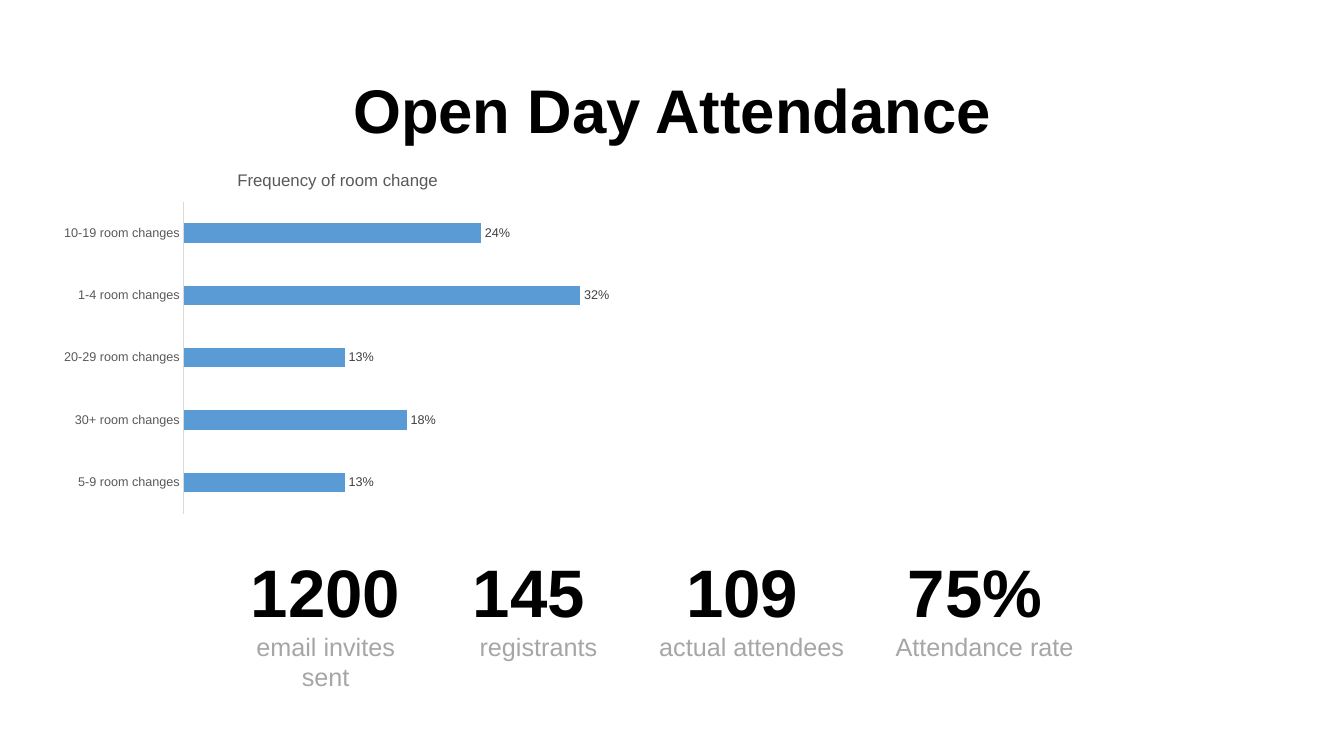
import pptx
import pptx.chart.data
import pptx.dml.color
import pptx.enum.chart
import pptx.enum.text
import pptx.oxml
import pptx.oxml.ns
import pptx.util

PX = 9144  # EMU in one px, at 100 px to the inch
FONT = "Arial"
BLACK = "000000"
LABEL_GREY = "A6A6A6"
AXIS_GREY = "595959"

ROOM_CHANGES = {
    "10-19 room changes": 0.24,
    "1-4 room changes": 0.32,
    "20-29 room changes": 0.13,
    "30+ room changes": 0.18,
    "5-9 room changes": 0.13,
}

# left, width, height, figure, label; the space after a figure shifts it left
STATISTICS = [
    (449, 170, 121, "145 ", "registrants"),
    (630, 231, 121, "109 ", "actual attendees"),
    (861, 231, 121, "75% ", "Attendance rate"),
    (238, 170, 151, "1200", "email invites sent"),
]
STATISTICS_TOP = 541


def rgb(value):
    return pptx.dml.color.RGBColor.from_string(value)


def box(left, top, width, height):
    return [length * PX for length in (left, top, width, height)]


def style_font(font, size, color, bold=False):
    font.name = FONT
    font.size = pptx.util.Pt(size)
    font.bold = bold
    font.color.rgb = rgb(color)


def add_title(slide, text):
    title = slide.shapes.title
    title.left, title.top, title.width, title.height = box(92, 40, 1150, 145)
    frame = title.text_frame
    frame.text = text
    frame.vertical_anchor = pptx.enum.text.MSO_ANCHOR.MIDDLE
    heading = frame.paragraphs[0]
    heading.alignment = pptx.enum.text.PP_ALIGN.CENTER
    heading.line_spacing = 0.9
    style_font(heading.runs[0].font, 44, BLACK, bold=True)


def place_plot(chart, x, y, w, h):
    """Fix the inner plot area, in fractions of the chart frame."""
    plot_area = chart._chartSpace.chart.plotArea
    for old_layout in plot_area.findall(pptx.oxml.ns.qn("c:layout")):
        plot_area.remove(old_layout)
    fractions = "".join(
        f'<c:{name} val="{value}"/>'
        for name, value in (("x", x), ("y", y), ("w", w), ("h", h))
    )
    plot_area.insert(0, pptx.oxml.parse_xml(
        f'<c:layout {pptx.oxml.ns.nsdecls("c")}><c:manualLayout>'
        '<c:layoutTarget val="inner"/><c:xMode val="edge"/><c:yMode val="edge"/>'
        f"{fractions}</c:manualLayout></c:layout>"
    ))


def style_axes(chart):
    no_ticks = pptx.enum.chart.XL_TICK_MARK.NONE
    categories = chart.category_axis
    categories.reverse_order = True
    categories.major_tick_mark = no_ticks
    categories.minor_tick_mark = no_ticks
    categories.has_major_gridlines = False
    categories.format.line.color.rgb = rgb("D9D9D9")
    categories.format.line.width = pptx.util.Pt(0.75)
    style_font(categories.tick_labels.font, 9, AXIS_GREY)

    shares = chart.value_axis
    shares.minimum_scale = 0
    shares.maximum_scale = 0.35
    shares.has_major_gridlines = False
    shares.visible = False


def style_bars(plot):
    plot.gap_width = 219
    plot.vary_by_categories = False
    bars = plot.series[0]
    bars.invert_if_negative = False
    bars.format.fill.solid()
    bars.format.fill.fore_color.rgb = rgb("5B9BD5")
    labels = bars.data_labels
    labels.show_value = True
    labels.number_format = "0%"
    labels.number_format_is_linked = False
    labels.position = pptx.enum.chart.XL_LABEL_POSITION.OUTSIDE_END
    style_font(labels.font, 9, "404040")


def add_room_change_chart(slide):
    data = pptx.chart.data.CategoryChartData(number_format="0%")
    data.categories = list(ROOM_CHANGES)
    data.add_series("Series 1", list(ROOM_CHANGES.values()))
    chart = slide.shapes.add_chart(
        pptx.enum.chart.XL_CHART_TYPE.BAR_CLUSTERED, *box(52, 153, 566, 364), data
    ).chart
    style_font(chart.font, 10, BLACK)
    chart.has_legend = False
    chart.has_title = True
    caption = chart.chart_title.text_frame
    caption.text = "Frequency of room change"
    style_font(caption.paragraphs[0].runs[0].font, 12, AXIS_GREY)
    style_axes(chart)
    style_bars(chart.plots[0])
    place_plot(chart, 0.23, 0.13, 0.76, 0.85)


def add_statistic(slide, left, width, height, figure, label):
    frame = slide.shapes.add_textbox(
        *box(left, STATISTICS_TOP, width, height)
    ).text_frame
    frame.word_wrap = True
    frame.auto_size = pptx.enum.text.MSO_AUTO_SIZE.SHAPE_TO_FIT_TEXT
    frame.text = f"{figure}\n{label}"
    styles = ((48, BLACK, True), (18, LABEL_GREY, False))
    for paragraph, style in zip(frame.paragraphs, styles):
        paragraph.alignment = pptx.enum.text.PP_ALIGN.CENTER
        style_font(paragraph.runs[0].font, *style)


def main():
    presentation = pptx.Presentation()
    presentation.slide_width = 1333 * PX
    presentation.slide_height = 750 * PX
    title_only = presentation.slide_layouts[5]
    slide = presentation.slides.add_slide(title_only)
    add_title(slide, "Open Day Attendance")
    add_room_change_chart(slide)
    for statistic in STATISTICS:
        add_statistic(slide, *statistic)
    presentation.save("out.pptx")


if __name__ == "__main__":
    main()
